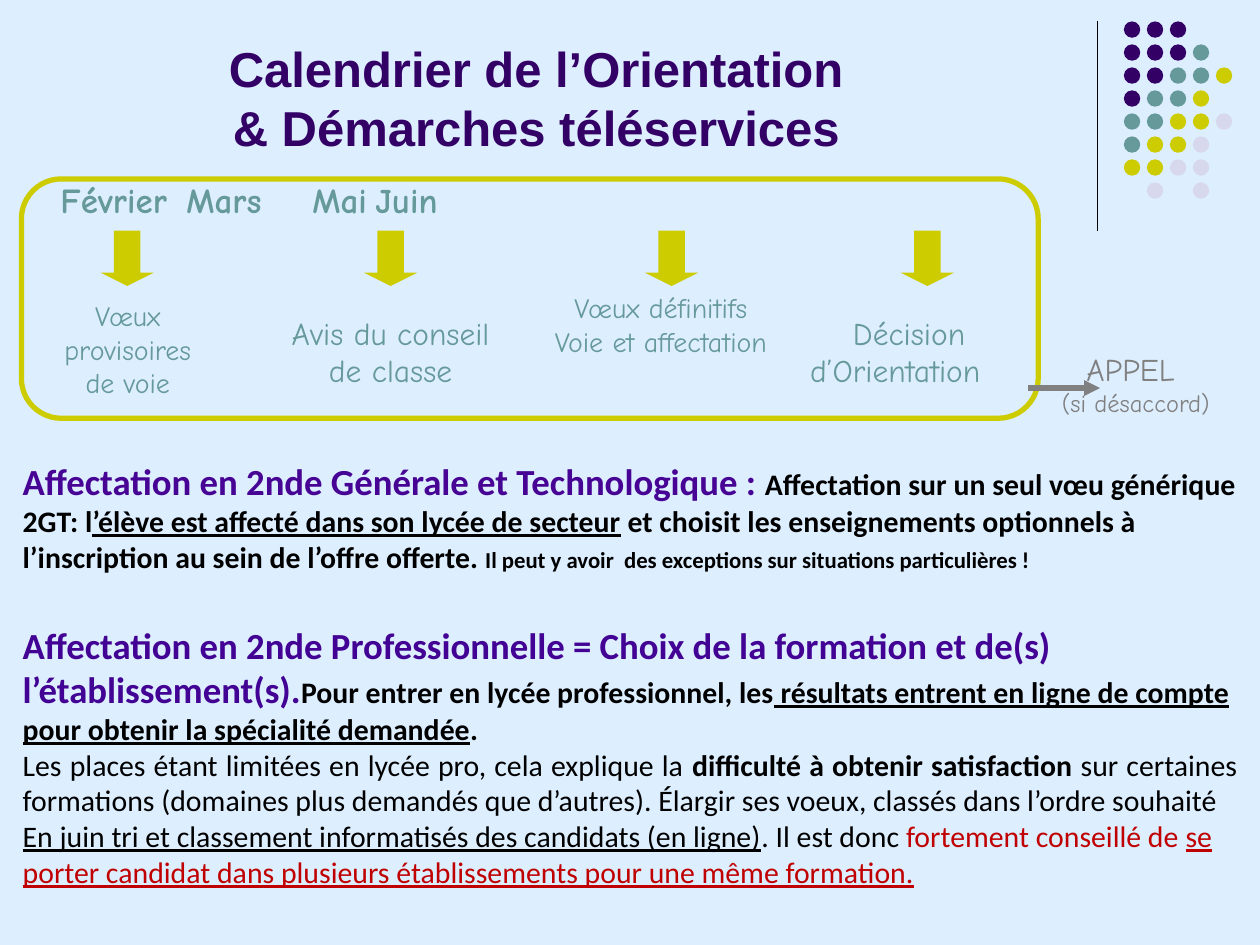
from dataclasses import dataclass

from lxml import etree
from pptx import Presentation
from pptx.dml.color import RGBColor
from pptx.enum import shapes, text
from pptx.oxml.ns import qn
from pptx.util import Inches, Pt

COLORS = {
    "sky": "DDEEFF", "purple": "330066", "teal": "669999", "olive": "CCCC00",
    "lavender": "D8D8EC", "grey": "808080", "black": "000000", "red": "C00000",
    "violet": "470394", "indigo": "420294",
}
HAND, SANS = "Comic Neue", "Calibri"
ALIGN = text.PP_ALIGN
Box = tuple[float, float, float, float]


@dataclass
class Span:
    words: str
    size: float
    color: str
    bold: bool = False
    underline: bool = False
    font: str = SANS


@dataclass
class Para:
    spans: list[Span]
    align: ALIGN = ALIGN.LEFT
    margin: float = 0
    indent: float = 0
    tabs: tuple[float, ...] = ()


@dataclass
class Label:
    box: Box
    paras: list[Para]


def rgb(name: str) -> RGBColor:
    return RGBColor.from_string(COLORS[name])


def hand(words: str, size: float, color: str = "teal", align: ALIGN = ALIGN.CENTER,
         indent: float = 0) -> Para:
    return Para([Span(words, size, color, font=HAND)], align, indent=indent)


def add_run(paragraph, span: Span) -> None:
    run = paragraph.add_run()
    run.text = span.words
    font = run.font
    font.name, font.size = span.font, Pt(span.size)
    font.bold, font.underline = span.bold, span.underline
    font.color.rgb = rgb(span.color)


def set_layout(paragraph, para: Para) -> None:
    """Alignment, indents and tab stops, without a bullet."""
    paragraph.alignment = para.align
    paragraph.space_before = Pt(0)
    props = paragraph._p.get_or_add_pPr()
    props.set("marL", str(Inches(para.margin)))
    props.set("indent", str(Inches(para.indent)))
    etree.SubElement(props, qn("a:buNone"))
    if para.tabs:
        stops = etree.SubElement(props, qn("a:tabLst"))
        for position in para.tabs:
            etree.SubElement(stops, qn("a:tab"), pos=str(Inches(position)), algn="l")


def fill_text(holder, label: Label, anchor=text.MSO_ANCHOR.TOP) -> None:
    """Place a text box or placeholder and write its paragraphs."""
    holder.left, holder.top, holder.width, holder.height = map(Inches, label.box)
    frame = holder.text_frame
    frame.word_wrap = True
    frame.auto_size = text.MSO_AUTO_SIZE.NONE
    frame.vertical_anchor = anchor
    frame.margin_left = frame.margin_right = Inches(0.05)
    frame.margin_top = frame.margin_bottom = Inches(0.05)
    for number, para in enumerate(label.paras):
        paragraph = frame.add_paragraph() if number else frame.paragraphs[0]
        set_layout(paragraph, para)
        for line, span in enumerate(para.spans):
            if line and para.spans[line - 1].words.endswith("Orientation"):
                paragraph.add_line_break()
            add_run(paragraph, span)


def add_shape(slide, kind, box: Box, fill: str | None = None):
    shape = slide.shapes.add_shape(kind, *map(Inches, box))
    shape.shadow.inherit = False
    shape.line.fill.background()
    if fill:
        shape.fill.solid()
        shape.fill.fore_color.rgb = rgb(fill)
    else:
        shape.fill.background()
    return shape


def add_line(slide, start: tuple[float, float], end: tuple[float, float],
             color: str, width: float, arrow: bool = False) -> None:
    line = slide.shapes.add_connector(
        shapes.MSO_CONNECTOR.STRAIGHT, *map(Inches, start + end))
    line.line.color.rgb = rgb(color)
    line.line.width = Pt(width)
    if arrow:
        etree.SubElement(line.line._get_or_add_ln(), qn("a:tailEnd"), type="triangle")
    etree.SubElement(line._element.spPr, qn("a:effectLst"))


DOT_ROWS = ["PPP", "PPPT", "PPTTO", "PTTO", "TTOOL", "TOOL", "OOLL", " L L"]
DOT_COLORS = {"P": "purple", "T": "teal", "O": "olive", "L": "lavender"}
DOT_PITCH = 0.73 / 4
ARROW_LEFTS = [0.8, 2.89, 5.12, 7.15]

TITLE = Label((0.18, 0.25, 8.15, 1.04), [Para(
    [Span(words, 28, "purple", bold=True, font="Arial")
     for words in ("Calendrier de l’Orientation", "& Démarches téléservices")],
    ALIGN.CENTER)])

MONTHS = Label((0.22, 1.37, 8.45, 0.49), [Para(
    [Span("Février\tMars\tMai\tJuin", 20, "teal", bold=True, font=HAND)],
    margin=0.21, tabs=(2.03, 3.64, 5.36))])

STEPS = [
    Label((0.18, 2.32, 1.67, 0.91), [hand("Vœux provisoires", 16), hand("de voie", 16)]),
    Label((2.13, 2.44, 1.94, 0.8), [hand("Avis du conseil de classe", 18)]),
    Label((4.2, 2.26, 2.09, 0.91),
          [hand("Vœux définitifs", 16), hand("Voie et affectation", 16)]),
    Label((6.38, 2.44, 1.8, 0.8),
          [hand("Décision d’Orientation", 18, align=ALIGN.LEFT, indent=0.34)]),
    Label((8.18, 2.73, 1.67, 0.71),
          [hand("APPEL ", 18, "grey"), hand("(si désaccord)", 14, "grey")]),
]

GENERAL = Label((0.13, 3.59, 9.74, 1.03), [Para([
    Span("Affectation en 2nde Générale et Technologique : ", 21, "violet", True),
    Span("Affectation sur un seul vœu générique 2GT: l", 17, "black", True),
    Span("’élève est affecté dans son lycée de secteur", 17, "black", True, True),
    Span(" et choisit les enseignements optionnels à l’inscription au sein de "
         "l’offre offerte. ", 17, "black", True),
    Span("Il peut y avoir  des exceptions sur situations particulières !",
         13, "black", True),
])])

VOCATIONAL = Label((0.13, 4.89, 9.74, 2.24), [
    Para([
        Span("Affectation en 2nde Professionnelle = Choix de la formation et de(s) "
             "l’établissement(s).", 21, "indigo", True),
        Span("Pour entrer en lycée professionnel, les", 17, "black", True),
        Span(" résultats entrent en ligne de compte pour obtenir la spécialité "
             "demandée", 17, "black", True, True),
        Span(".", 17, "black", True),
    ]),
    Para([
        Span("Les places étant limitées en lycée pro, cela explique la ", 17, "black"),
        Span("difficulté à obtenir satisfaction ", 17, "black", True),
        Span("sur certaines formations (domaines plus demandés que d’autres). "
             "Élargir ses voeux, classés dans l’ordre souhaité ", 17, "black"),
    ], ALIGN.JUSTIFY),
    Para([
        Span("En juin tri et classement informatisés des candidats (en ligne)",
             17, "black", underline=True),
        Span(". Il est donc ", 17, "black"),
        Span("fortement conseillé de ", 17, "red"),
        Span("se porter candidat dans plusieurs établissements pour une même "
             "formation.", 17, "red", underline=True),
    ]),
])


def main() -> None:
    prs = Presentation()
    prs.slide_width, prs.slide_height = Inches(10), Inches(7.5)
    slide = prs.slides.add_slide(prs.slide_layouts.get_by_name("Two Content"))
    slide.background.fill.solid()
    slide.background.fill.fore_color.rgb = rgb("sky")

    add_line(slide, (8.71, 0.17), (8.71, 1.83), "black", 0.75)
    for row, dots in enumerate(DOT_ROWS):
        for column, dot in enumerate(dots):
            if dot in DOT_COLORS:
                box = (8.92 + column * DOT_PITCH, 0.17 + row * DOT_PITCH, 0.13, 0.13)
                add_shape(slide, shapes.MSO_SHAPE.OVAL, box, DOT_COLORS[dot])

    fill_text(slide.shapes.title, TITLE, text.MSO_ANCHOR.BOTTOM)
    for label in [MONTHS, *STEPS]:
        fill_text(slide.shapes.add_textbox(*map(Inches, label.box)), label)
    for left in ARROW_LEFTS:
        arrow = add_shape(slide, shapes.MSO_SHAPE.DOWN_ARROW,
                          (left, 1.83, 0.42, 0.44), "olive")
        arrow.adjustments[1] = 0.25

    calendar = add_shape(slide, shapes.MSO_SHAPE.ROUNDED_RECTANGLE,
                         (0.17, 1.42, 8.07, 1.9))
    calendar.line.color.rgb = rgb("olive")
    calendar.line.width = Pt(3)
    add_line(slide, (8.16, 3.08), (8.73, 3.08), "grey", 3, arrow=True)

    fill_text(slide.placeholders[1], GENERAL)
    fill_text(slide.placeholders[2], VOCATIONAL)
    prs.save("out.pptx")


if __name__ == "__main__":
    main()
